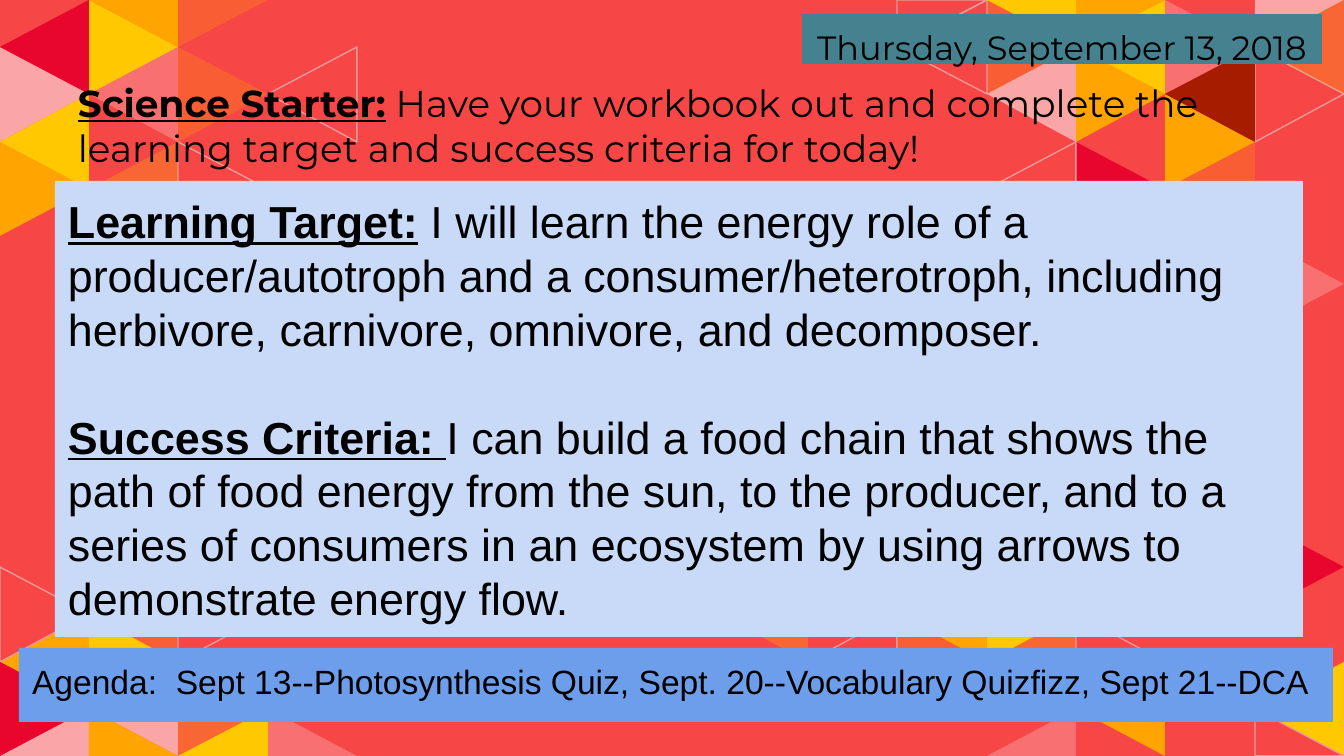
from dataclasses import dataclass

from lxml import etree
from pptx import Presentation
from pptx import util as u
from pptx.dml.color import RGBColor
from pptx.enum import shapes, text
from pptx.oxml.ns import qn

PX = u.Inches(10) / 1344
WIDTH, HEIGHT = 1344, 756
TILE_W, ROWS = 89.25, 16


@dataclass(frozen=True)
class Theme:
    background: str = "F64646"
    ink: str = "000000"
    outline: str = "EA9999"
    date_fill: str = "45818E"
    goals_fill: str = "C9DAF8"
    agenda_fill: str = "6D9EEB"
    gold: str = "FFC800"
    amber: str = "FFA400"
    red: str = "E8062F"
    rust: str = "A61C00"
    white: str = "FFFFFF"
    display: str = "Montserrat"
    body: str = "Arial"
    starter_size: int = 20
    note_size: int = 18
    goals_size: int = 24


THEME = Theme()
TILE_FILLS = {
    "gold": (THEME.gold, 100),
    "amber": (THEME.amber, 100),
    "red": (THEME.red, 100),
    "rust": (THEME.rust, 100),
    "pale": (THEME.white, 52),
    "mist": (THEME.white, 23),
    "peach": (THEME.amber, 25),
    "straw": (THEME.gold, 25),
}

TOP_LEFT = [
    (0, 1, "R", "pale"), (0, 3, "R", "amber"), (2, 1, "R", "peach"),
    (2, 3, "R", "line"), (1, 0, "R", "gold"), (2, -1, "R", "peach"),
    (0, 2, "L", "gold"), (1, 1, "L", "mist"), (1, 3, "L", "straw"),
    (3, 1, "L", "line"), (0, 0, "L", "red"), (1, -1, "L", "amber"),
]
RIGHT = [
    (2, 13, "R", "peach"), (3, 12, "R", "gold"), (4, 13, "R", "line"),
    (5, 2, "R", "amber"), (6, 1, "R", "line"), (6, 11, "R", "red"),
    (2, -1, "R", "line"), (3, 0, "R", "peach"), (4, -1, "R", "amber"),
    (5, 0, "R", "mist"), (6, -1, "R", "pale"), (0, 12, "L", "straw"),
    (2, 12, "L", "amber"), (1, 13, "L", "line"), (3, 13, "L", "straw"),
    (5, 1, "L", "rust"), (5, 3, "L", "peach"), (2, 0, "L", "line"),
    (3, -1, "L", "gold"), (3, 15, "L", "mist"), (4, 14, "L", "amber"),
    (6, 0, "L", "straw"), (6, 14, "L", "gold"), (4, 1, "R", "amber"),
    (4, 3, "R", "red"), (3, 1, "L", "pale"), (3, 3, "L", "line"),
    (4, 0, "L", "gold"), (6, 15, "R", "line"), (6, 5, "R", "mist"),
]
BOTTOM_LEFT = [
    (1, 12, "L", "peach"), (0, 13, "L", "amber"), (2, 15, "L", "gold"),
    (1, 14, "L", "pale"), (0, 15, "L", "pale"), (2, 12, "R", "line"),
    (0, 12, "R", "line"), (1, 13, "R", "gold"), (2, 14, "R", "straw"),
    (1, 15, "R", "amber"), (0, 14, "R", "red"), (3, 15, "R", "mist"),
]


def emu(px):
    return u.Emu(round(px * PX))


def rgb(value):
    return RGBColor.from_string(value)


def write(p, content, *, font, size, color, bold=False, underline=False):
    r = p.add_run()
    r.text = content
    r.font.name = font
    r.font.size = u.Pt(size)
    r.font.color.rgb = rgb(color)
    r.font.bold = bold
    r.font.underline = underline


class Deck:
    def __init__(self, prs, theme):
        self.theme = theme
        self.s = prs.slides.add_slide(prs.slide_layouts[6])
        self.s.background.fill.solid()
        self.s.background.fill.fore_color.rgb = rgb(theme.background)

    def tile(self, origin, col, row, direction, style):
        left, right = (origin + round(n * TILE_W) for n in (col, col + 1))
        base, tip = (left, right) if direction == "R" else (right, left)
        top, middle, bottom = (
            round(min(max(n, 0), ROWS) * HEIGHT / ROWS)
            for n in (row, row + 1, row + 2)
        )
        builder = self.s.shapes.build_freeform(base, top, scale=PX)
        builder.add_line_segments([(tip, middle), (base, bottom)], close=True)
        sp = builder.convert_to_shape()
        sp.shadow.inherit = False
        if style == "line":
            sp.fill.background()
            sp.line.color.rgb = rgb(self.theme.outline)
            sp.line.width = u.Pt(0.75)
            return
        color, opacity = TILE_FILLS[style]
        sp.fill.solid()
        sp.fill.fore_color.rgb = rgb(color)
        sp.line.fill.background()
        if opacity < 100:
            clr = sp.fill._xPr.find(qn("a:solidFill"))[0]
            etree.SubElement(clr, qn("a:alpha")).set("val", str(opacity * 1000))

    def mosaic(self, origin, tiles):
        for tile in tiles:
            self.tile(origin, *tile)

    def panel(self, x, y, w, h, fill):
        sp = self.s.shapes.add_shape(
            shapes.MSO_SHAPE.RECTANGLE, emu(x), emu(y), emu(w), emu(h)
        )
        sp.shadow.inherit = False
        sp.fill.solid()
        sp.fill.fore_color.rgb = rgb(fill)
        sp.line.fill.background()
        return sp

    def label(self, x, y, w, h):
        return self.s.shapes.add_textbox(emu(x), emu(y), emu(w), emu(h))

    def fill_text(self, sp, paragraphs, *, font, size, inset_top=13,
                  align=text.PP_ALIGN.LEFT, gap=0):
        tf = sp.text_frame
        tf.word_wrap = True
        tf.vertical_anchor = text.MSO_ANCHOR.TOP
        tf.margin_left = tf.margin_right = tf.margin_bottom = emu(13)
        tf.margin_top = emu(inset_top)
        for i, (heading, content) in enumerate(paragraphs):
            p = tf.add_paragraph() if i else tf.paragraphs[0]
            p.alignment = align
            p.space_before = u.Pt(gap if i else 0)
            style = dict(font=font, size=size, color=self.theme.ink)
            if heading:
                write(p, heading, bold=True, underline=True, **style)
            write(p, content, **style)


def main():
    prs = Presentation()
    prs.slide_width, prs.slide_height = emu(WIDTH), emu(HEIGHT)
    deck = Deck(prs, THEME)
    deck.mosaic(0, TOP_LEFT)
    deck.mosaic(WIDTH - round(7 * TILE_W), RIGHT)
    deck.mosaic(0, BOTTOM_LEFT)

    starter = deck.label(65, 79, 1168, 134)
    deck.fill_text(starter, [(
        "Science Starter:",
        " Have your workbook out and complete the learning target and "
        "success criteria for today!",
    )], font=THEME.display, size=THEME.starter_size, inset_top=1)

    date = deck.panel(802, 14, 520, 50, THEME.date_fill)
    deck.fill_text(date, [("", "Thursday, September 13, 2018")],
                   font=THEME.display, size=THEME.note_size,
                   align=text.PP_ALIGN.CENTER)

    goals = deck.panel(55, 181, 1248, 456, THEME.goals_fill)
    deck.fill_text(goals, [
        ("Learning Target:",
         " I will learn the energy role of a producer/autotroph and a "
         "consumer/heterotroph, including herbivore, carnivore, omnivore, "
         "and decomposer."),
        ("Success Criteria: ",
         "I can build a food chain that shows the path of food energy from "
         "the sun, to the producer, and to a series of consumers in an "
         "ecosystem by using arrows to demonstrate energy flow."),
    ], font=THEME.body, size=THEME.goals_size, gap=29)

    agenda = deck.panel(19, 648, 1314, 74, THEME.agenda_fill)
    deck.fill_text(agenda, [(
        "",
        "Agenda:  Sept 13--Photosynthesis Quiz, Sept. 20--Vocabulary "
        "Quizfizz, Sept 21--DCA",
    )], font=THEME.body, size=THEME.note_size)

    prs.save("out.pptx")


if __name__ == "__main__":
    main()
